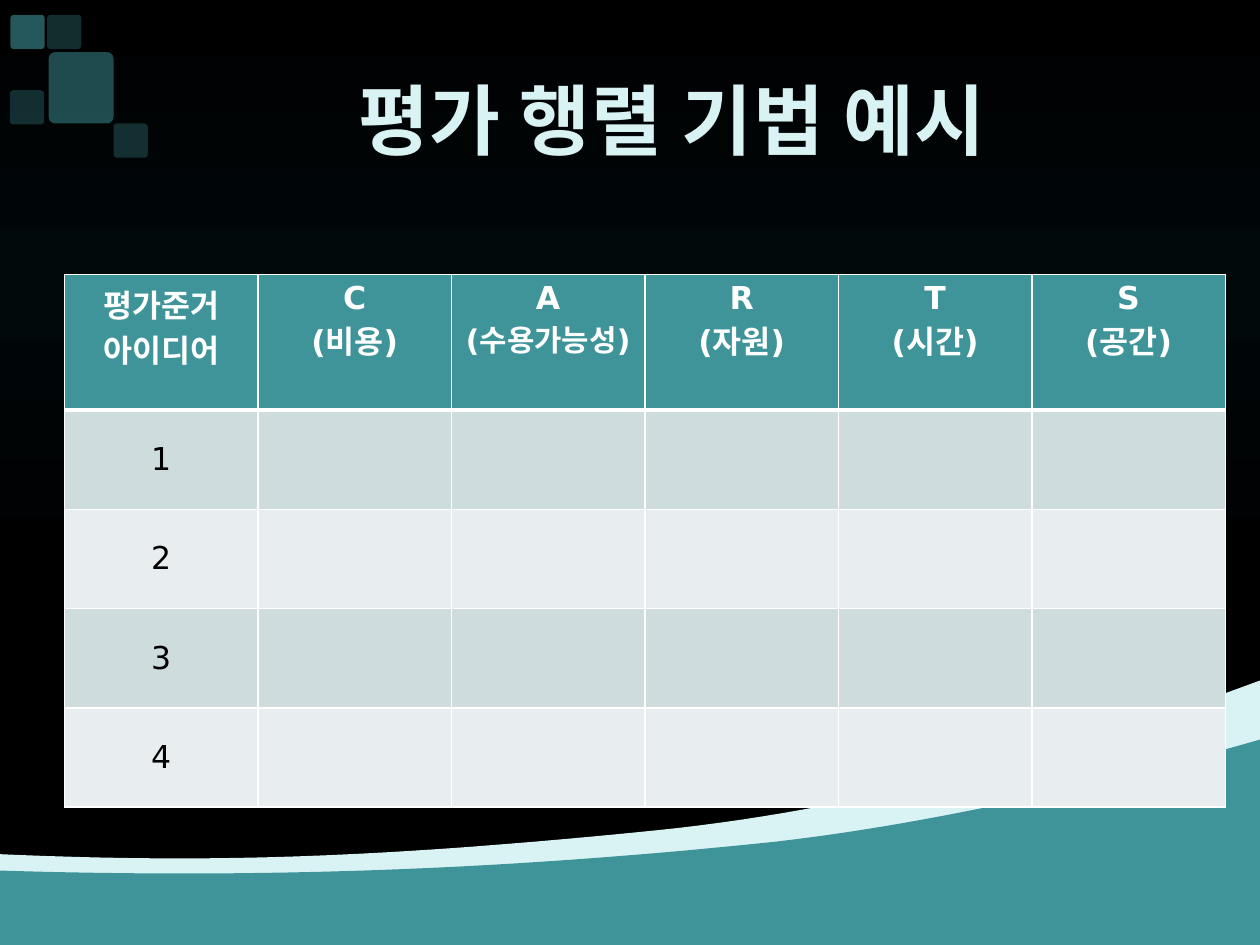
"""Build the evaluation matrix slide."""
import dataclasses
import typing

import lxml.etree
import pptx
import pptx.dml.color
import pptx.enum.shapes
import pptx.enum.text
import pptx.oxml.ns
import pptx.util

Cm = pptx.util.Cm
Pt = pptx.util.Pt
qn = pptx.oxml.ns.qn
Point = tuple[float, float]
Stop = tuple[int, str]


@dataclasses.dataclass(frozen=True)
class Theme:
    teal: str = "3F949A"
    pale: str = "D9F3F4"
    white: str = "FFFFFF"
    black: str = "000000"
    bands: tuple[str, str] = ("CFDCDE", "E8EEEF")
    night: tuple[Stop, ...] = ((0, "000000"), (30, "00080A"), (61, "000000"), (100, "000000"))
    shine: tuple[Stop, ...] = ((0, "D9F3F4"), (26, "D9F3F4"), (41, "CFE8E9"), (67, "A1B4B5"), (95, "D9F3F4"))
    title_font: str = "Cambria"
    body_font: str = "DejaVu Sans"
    title_size: float = 44
    body_size: float = 18
    small_size: float = 17
    thin: float = 1
    thick: float = 3


@dataclasses.dataclass(frozen=True)
class Wave:
    color: str
    curves: tuple[tuple[Point, Point, Point, Point], ...]


@dataclasses.dataclass(frozen=True)
class Tile:
    left: float
    top: float
    width: float
    height: float
    opacity: int


@dataclasses.dataclass(frozen=True)
class Heading:
    lines: tuple[str, str]
    second_size: float


THEME = Theme()
WIDTH, HEIGHT = 25.4, 19.05
WAVES = (
    Wave(THEME.pale, (
        ((0, 17.22), (4.09, 17.4), (7.44, 17.32), (13.23, 16.74)),
        ((13.23, 16.74), (19.02, 16.15), (24.08, 14.2), (WIDTH, 13.72)),
    )),
    Wave(THEME.teal, (
        ((0, 17.55), (6.25, 17.75), (11.3, 17.42), (15.62, 16.97)),
        ((15.62, 16.97), (19.91, 16.48), (24.36, 15.21), (WIDTH, 14.91)),
    )),
)
TILES = (
    Tile(0.95, 0.3, 0.69, 0.69, 30),
    Tile(0.2, 1.82, 0.69, 0.69, 30),
    Tile(0.21, 0.3, 0.69, 0.69, 60),
    Tile(2.29, 2.49, 0.69, 0.69, 30),
    Tile(0.98, 1.05, 1.31, 1.44, 50),
)
HEADINGS = (
    Heading(("평가준거", "아이디어"), THEME.body_size),
    Heading(("C", "(비용)"), THEME.body_size),
    Heading(("A", "(수용가능성)"), THEME.small_size),
    Heading(("R", "(자원)"), THEME.body_size),
    Heading(("T", "(시간)"), THEME.body_size),
    Heading(("S", "(공간)"), THEME.body_size),
)
IDEAS = ("1", "2", "3", "4")


def rgb(color: str) -> pptx.dml.color.RGBColor:
    """Turn a hex code into a colour."""
    return pptx.dml.color.RGBColor.from_string(color)


def add_color(parent: typing.Any, color: str) -> None:
    """Append a hex colour element."""
    lxml.etree.SubElement(parent, qn("a:srgbClr"), val=color)


def paint_gradient(fill: typing.Any, root: typing.Any, stops: tuple[Stop, ...]) -> None:
    """Give a fill a top-to-bottom gradient."""
    fill.gradient()
    fill.gradient_angle = 270
    listing = next(root.iter(qn("a:gsLst")))
    for old in list(listing):
        listing.remove(old)
    for position, color in stops:
        add_color(lxml.etree.SubElement(listing, qn("a:gs"), pos=str(position * 1000)), color)


def paint_shape(shape: typing.Any, color: str, opacity: int = 100) -> None:
    """Fill a shape flatly, without line or shadow."""
    shape.shadow.inherit = False
    shape.line.fill.background()
    shape.fill.solid()
    shape.fill.fore_color.rgb = rgb(color)
    if opacity < 100:
        tint = next(shape.element.spPr.iter(qn("a:srgbClr")))
        lxml.etree.SubElement(tint, qn("a:alpha"), val=str(opacity * 1000))


def draw_wave(page: typing.Any, wave: Wave, steps: int = 40) -> None:
    """Draw the area below a chain of Bezier curves."""
    points = [
        tuple(
            int(Cm((1 - t) ** 3 * a + 3 * (1 - t) ** 2 * t * b + 3 * (1 - t) * t ** 2 * c + t ** 3 * d))
            for a, b, c, d in zip(*curve)
        )
        for curve in wave.curves
        for t in (step / steps for step in range(steps + 1))
    ]
    points += [(Cm(WIDTH), Cm(HEIGHT)), (0, Cm(HEIGHT))]
    builder = page.shapes.build_freeform(*points[0])
    builder.add_line_segments(points[1:], close=True)
    paint_shape(builder.convert_to_shape(), wave.color)


def draw_tile(page: typing.Any, tile: Tile) -> None:
    """Draw one translucent rounded tile."""
    box = page.shapes.add_shape(
        pptx.enum.shapes.MSO_SHAPE.ROUNDED_RECTANGLE,
        Cm(tile.left), Cm(tile.top), Cm(tile.width), Cm(tile.height),
    )
    box.adjustments[0] = 0.1
    paint_shape(box, THEME.teal, tile.opacity)


def add_span(para: typing.Any, text: str, font: str, size: float, bold: bool) -> typing.Any:
    """Add one centred run."""
    para.alignment = pptx.enum.text.PP_ALIGN.CENTER
    span = para.add_run()
    span.text = text
    span.font.name, span.font.size, span.font.bold = font, Pt(size), bold
    return span


def write_title(page: typing.Any, text: str) -> None:
    """Place and format the title."""
    box = page.shapes.title
    box.left, box.top, box.width, box.height = Cm(3.18), Cm(1), Cm(20.75), Cm(2.77)
    box.text_frame.vertical_anchor = pptx.enum.text.MSO_ANCHOR.MIDDLE
    span = add_span(box.text_frame.paragraphs[0], text, THEME.title_font, THEME.title_size, True)
    properties = span.font.fill, next(box.element.iter(qn("a:rPr")))
    paint_gradient(*properties, THEME.shine)
    properties[1].set("spc", "50")


def style_cell(cell: typing.Any, color: str, top: float, bottom: float) -> None:
    """Fill a cell and rule its four sides in white."""
    cell.fill.solid()
    cell.fill.fore_color.rgb = rgb(color)
    properties = next(cell._tc.iter(qn("a:tcPr")))
    sides = (("L", THEME.thin), ("R", THEME.thin), ("T", top), ("B", bottom))
    for index, (side, width) in enumerate(sides):
        line = lxml.etree.Element(qn(f"a:ln{side}"), w=str(int(Pt(width))))
        add_color(lxml.etree.SubElement(line, qn("a:solidFill")), THEME.white)
        properties.insert(index, line)


def draw_matrix(page: typing.Any) -> None:
    """Draw the evaluation table."""
    rows, columns = len(IDEAS) + 1, len(HEADINGS)
    table = page.shapes.add_table(
        rows, columns, Cm(1.3), Cm(5.53), Cm(3.9 * columns), Cm(2 * rows)
    ).table
    for column, heading in enumerate(HEADINGS):
        cell = table.cell(0, column)
        style_cell(cell, THEME.teal, THEME.thin, THEME.thick)
        frame = cell.text_frame
        paras = frame.paragraphs[0], frame.add_paragraph()
        for para, text, size in zip(paras, heading.lines, (THEME.body_size, heading.second_size)):
            add_span(para, text, THEME.body_font, size, True).font.color.rgb = rgb(THEME.white)
    for row, idea in enumerate(IDEAS, start=1):
        for column in range(columns):
            top = THEME.thick if row == 1 else THEME.thin
            style_cell(table.cell(row, column), THEME.bands[(row - 1) % 2], top, THEME.thin)
        cell = table.cell(row, 0)
        cell.vertical_anchor = pptx.enum.text.MSO_ANCHOR.MIDDLE
        span = add_span(cell.text_frame.paragraphs[0], idea, THEME.body_font, THEME.body_size, False)
        span.font.color.rgb = rgb(THEME.black)


def main() -> None:
    """Assemble and save the deck."""
    deck = pptx.Presentation()
    deck.slide_width, deck.slide_height = Cm(WIDTH), Cm(HEIGHT)
    page = deck.slides.add_slide(deck.slide_layouts[5])
    paint_gradient(page.background.fill, page.element, THEME.night)
    for wave in WAVES:
        draw_wave(page, wave)
    for tile in TILES:
        draw_tile(page, tile)
    write_title(page, "평가 행렬 기법 예시")
    draw_matrix(page)
    deck.save("out.pptx")


if __name__ == "__main__":
    main()
